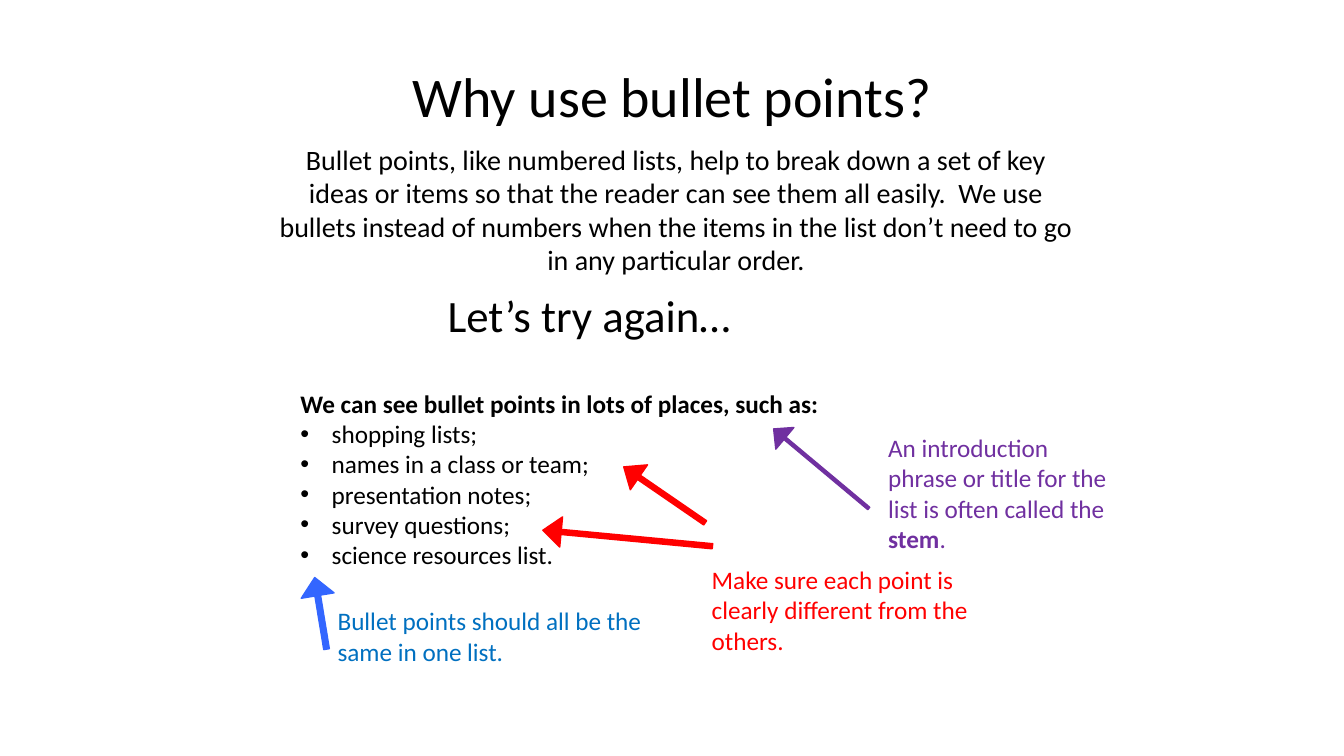
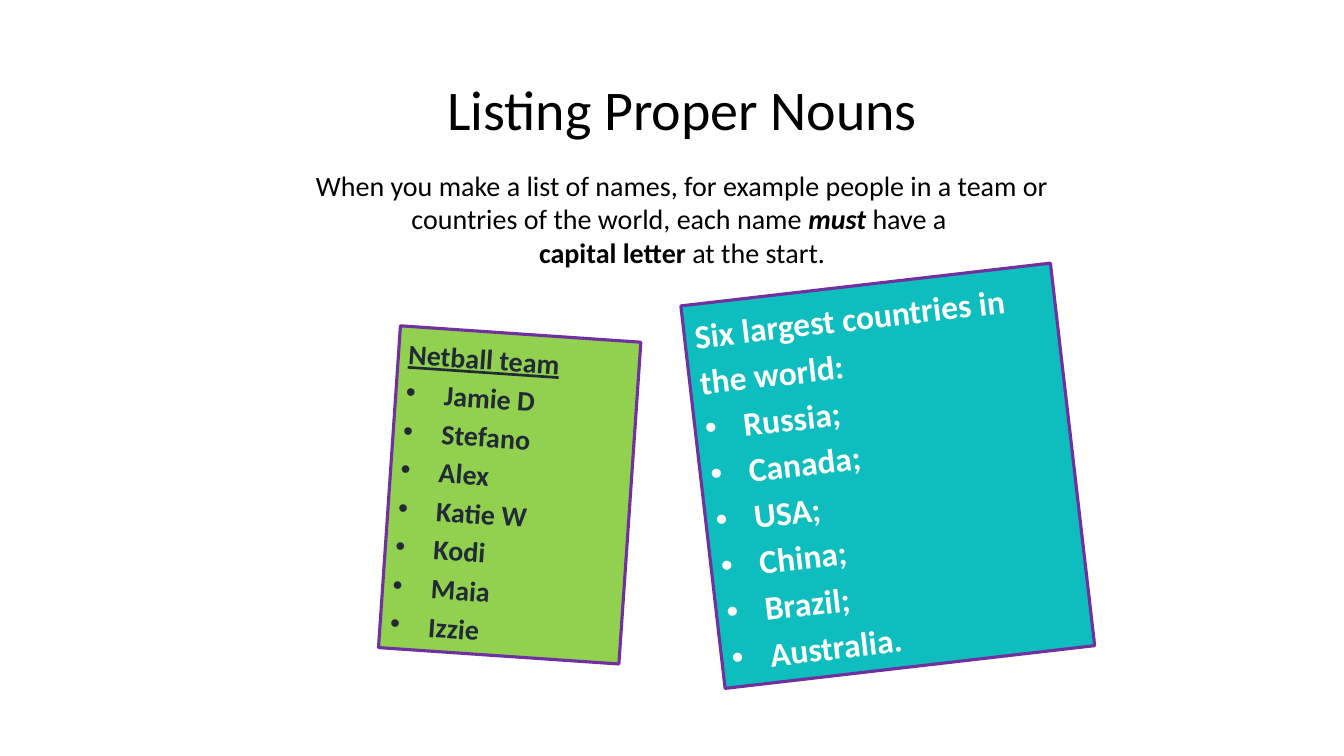
"""Build two slides on using bullet points and listing proper nouns."""
from lxml.etree import SubElement
from pptx import Presentation
from pptx.dml.color import RGBColor
from pptx.enum.shapes import MSO_SHAPE
from pptx.enum.text import MSO_ANCHOR, MSO_AUTO_SIZE, PP_ALIGN
from pptx.oxml.ns import qn
from pptx.util import Inches, Pt

FONT = "Calibri"
BLACK = RGBColor(0x00, 0x00, 0x00)
WHITE = RGBColor(0xFF, 0xFF, 0xFF)
SLATE = RGBColor(0x22, 0x2A, 0x35)
PURPLE = RGBColor(0x70, 0x30, 0xA0)
RED = RGBColor(0xFF, 0x00, 0x00)
BLUE = RGBColor(0x00, 0x70, 0xC0)
BRIGHT_BLUE = RGBColor(0x33, 0x66, 0xFF)
GREEN = RGBColor(0x92, 0xD0, 0x50)
TEAL = RGBColor(0x0E, 0xBE, 0xBE)


def place(box, left, top, width, height, rotation=0):
    """Set the position, size and rotation of a box."""
    box.left, box.top = Inches(left), Inches(top)
    box.width, box.height = Inches(width), Inches(height)
    box.rotation = rotation


def write(box, size, color, lead, items=(), align=PP_ALIGN.LEFT, indent=0.31, spacing=1.0):
    """Write a lead paragraph of (text, style) runs, then bulleted items."""
    frame = box.text_frame
    frame.word_wrap = True
    frame.auto_size = MSO_AUTO_SIZE.NONE
    frame.vertical_anchor = MSO_ANCHOR.TOP
    for number, runs in enumerate([lead] + [[(item, items[1])] for item in items[0]] if items else [lead]):
        para = frame.add_paragraph() if number else frame.paragraphs[0]
        para.alignment = align
        para.line_spacing = spacing
        para.space_before = Pt(0)
        properties = para._p.get_or_add_pPr()
        hang = Inches(indent) if number else 0
        properties.set("marL", str(hang))
        properties.set("indent", str(-hang))
        if number:
            SubElement(properties, qn("a:buFont"), typeface="Arial")
            SubElement(properties, qn("a:buChar"), char="•")
        else:
            SubElement(properties, qn("a:buNone"))
        for text, style in runs:
            if text == "\n":
                para.add_line_break()
                continue
            span = para.add_run()
            span.text = text
            span.font.name = FONT
            span.font.size = Pt(size)
            span.font.color.rgb = color
            span.font.bold = "b" in style
            span.font.italic = "i" in style
            span.font.underline = "u" in style


deck = Presentation()
deck.slide_width, deck.slide_height = Inches(13.33), Inches(7.5)
bullets_page = deck.slides.add_slide(deck.slide_layouts[1])
nouns_page = deck.slides.add_slide(deck.slide_layouts[3])

headings = [
    (bullets_page, "Why use bullet points?", (3.16, 0.56, 7.01, 0.77), (2.65, 1.36, 8.11, 1.45), [
        ("Bullet points, like numbered lists, help to break down a set of key ideas or items "
         "so that the reader can see them all easily.  We use bullets instead of numbers when "
         "the items in the list don’t need to go in any particular order.", "")]),
    (nouns_page, "Listing Proper Nouns", (2.81, 0.69, 7.91, 0.77), (2.71, 1.62, 8.11, 1.11), [
        ("When you make a list of names, for example people in a team or countries of the "
         "world, each name ", ""), ("must ", "bi"), ("have a ", ""), ("\n", ""),
        ("capital letter", "b"), (" at the start.", "")]),
]
for page, title, title_area, intro_area, intro in headings:
    place(page.shapes.title, *title_area)
    write(page.shapes.title, 40, BLACK, [(title, "")], align=PP_ALIGN.CENTER)
    intro_box = page.shapes.add_textbox(0, 0, 0, 0)
    place(intro_box, *intro_area)
    write(intro_box, 20, BLACK, intro, align=PP_ALIGN.CENTER)

example_list = bullets_page.placeholders[1]
place(example_list, 2.88, 3.8, 8.11, 1.92)
write(example_list, 18, BLACK,
      [("We can see bullet points in lots of places, such as:", "b")],
      (["shopping lists;", "names in a class or team;", "presentation notes;",
        "survey questions;", "science resources list."], ""))

notes = [
    ((4.34, 2.81, 6.02, 0.66), 32, BLACK, [("Let’s try again…", "")]),
    ((8.71, 4.24, 2.38, 1.31), 18, PURPLE, [
        ("An introduction phrase or title for the list is often called the ", ""),
        ("stem", "b"), (".", "")]),
    ((3.25, 5.96, 3.5, 0.71), 18, BLUE, [
        ("Bullet points should all be the same in one list.", "")]),
    ((6.96, 5.55, 2.92, 1.01), 18, RED, [
        ("Make sure each point is clearly different from the others.", "")]),
]
for area, size, color, runs in notes:
    note = bullets_page.shapes.add_textbox(0, 0, 0, 0)
    place(note, *area)
    write(note, size, color, runs)

arrows = [
    ((7.53, 4.51, 1.23, 0.28, 39.9), PURPLE, 0.11, 0.52),
    ((2.82, 5.92, 0.72, 0.33, 80.6), BRIGHT_BLUE, 0.17, 0.55),
    ((6.1, 4.76, 0.98, 0.3, 34.5), RED, 0.17, 0.61),
    ((5.38, 5.19, 1.69, 0.3, 5.4), RED, 0.17, 0.61),
]
for area, color, shaft, head in arrows:
    arrow = bullets_page.shapes.add_shape(MSO_SHAPE.LEFT_ARROW, 0, 0, 0, 0)
    place(arrow, *area)
    arrow.adjustments[0], arrow.adjustments[1] = shaft, head
    arrow.shadow.inherit = False
    arrow.fill.solid()
    arrow.fill.fore_color.rgb = color
    arrow.line.color.rgb = color
    arrow.line.width = Pt(1)

cards = [
    ((3.86, 3.31, 2.39, 3.2, 3.9), GREEN, 20, SLATE, ("Netball team", "bu"),
     ["Jamie D", "Stefano", "Alex", "Katie W", "Kodi", "Maia", "Izzie"]),
    ((6.96, 2.81, 3.69, 3.82, 353.4), TEAL, 24, WHITE,
     ("Six largest countries in the world:", "b"),
     ["Russia;", "Canada;", "USA;", "China;", "Brazil;", "Australia."]),
]
for index, (area, fill, size, color, heading, names) in enumerate(cards, start=1):
    card = nouns_page.placeholders[index]
    place(card, *area)
    card.fill.solid()
    card.fill.fore_color.rgb = fill
    card.line.color.rgb = PURPLE
    card.line.width = Pt(2.25)
    write(card, size, color, [heading], (names, "b"), indent=0.38, spacing=1.15)

deck.save("out.pptx")
